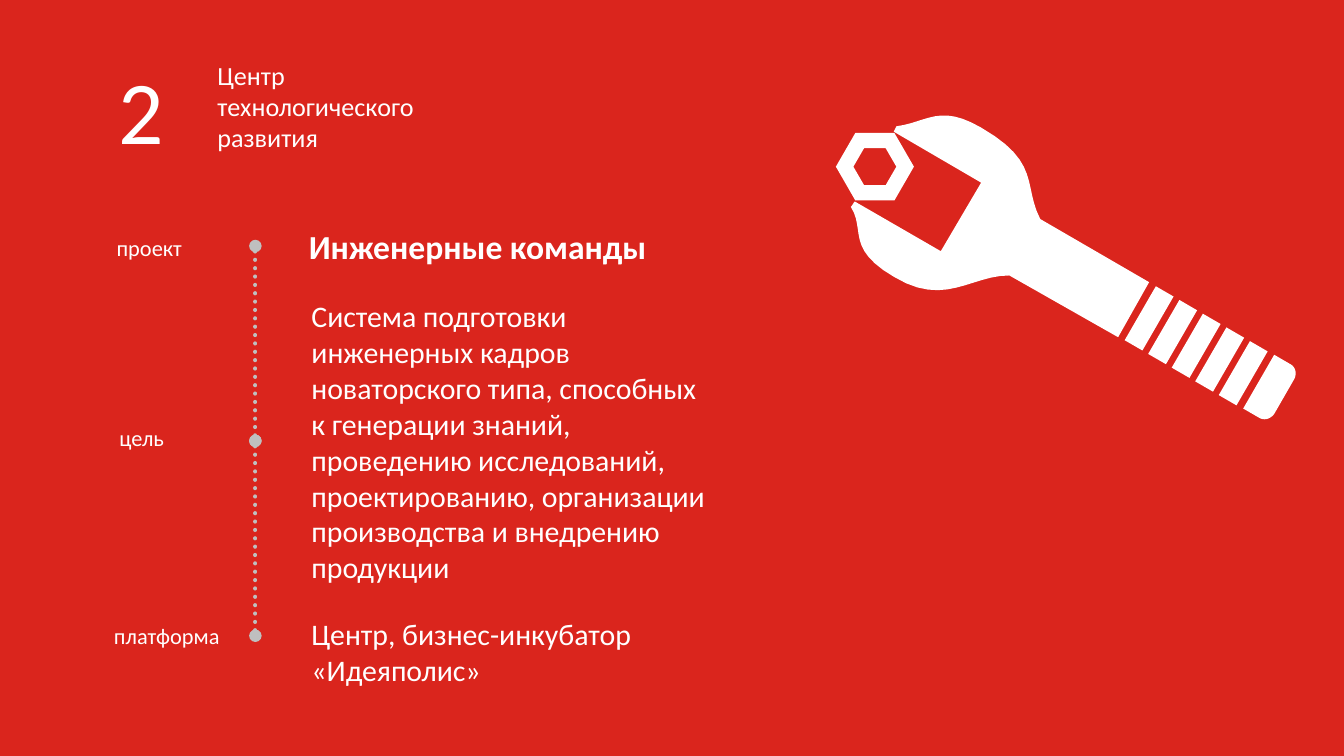
from dataclasses import dataclass
from math import cos, pi, sin

from lxml.etree import SubElement
from pptx import Presentation
from pptx.dml.color import RGBColor
from pptx.enum.dml import MSO_LINE_DASH_STYLE as Dash
from pptx.enum.shapes import MSO_CONNECTOR as Conn
from pptx.enum.text import MSO_AUTO_SIZE as AutoSize
from pptx.oxml.ns import qn
from pptx.util import Pt

RED, WHITE, GREY = "DA251D", "FFFFFF", "BFBFBF"
UNIT = 100  # freeform units per point
CURVE_STEPS = 12

Point = tuple[float, float]
Contour = list[Point]


@dataclass
class Label:
    text: str
    left: float
    top: float
    width: float
    height: float
    size: float
    bold: bool = False


LABELS = [
    Label("2", 56.2, 25.9, 35.3, 65.5, 48),
    Label("Центр технологического развития", 109.4, 28.1, 158.4, 58.3, 14),
    Label("проект", 55.4, 121.7, 95.8, 21.6, 12),
    Label("Инженерные команды", 158.4, 117.4, 328.3, 28.8, 18, True),
    Label("цель", 56.9, 223.9, 51.8, 21.6, 12),
    Label("Система подготовки инженерных кадров новаторского типа, способных "
          "к генерации знаний, проведению исследований, проектированию, "
          "организации производства и внедрению продукции",
          159.8, 156.2, 230.4, 162.7, 16),
    Label("платформа", 54, 329.8, 77, 21.6, 12),
    Label("Центр, бизнес-инкубатор «Идеяполис»", 159.8, 326.2, 228.2, 46.1, 16),
]

# Wrench outlines: a step of one point is a line, of three a Bezier curve
WRENCH_HEAD = [
    [(525.6, 68.4)],
    [(558, 87.1), (547.9, 99.4), (557.3, 117.4)],
    [(615.6, 151.2)], [(599, 180.7)], [(540.7, 147.6)],
    [(519.8, 147.6), (506.2, 164.9), (478.8, 148.3)],
    [(452.9, 133.2), (463.7, 123.1), (455.8, 110.9)],
    [(456.5, 110.2), (457.2, 108.7), (457.9, 108)],
    [(504, 134.6)], [(525.6, 97.9)], [(478.8, 70.6)], [(480.2, 67.7)],
    [(496.8, 65.5), (503.3, 55.4), (525.6, 68.4)],
]
HANDLE_END = [
    [(682.6, 190.1)], [(691.2, 195.1)],
    [(694.1, 196.6), (694.8, 200.2), (693.4, 203)],
    [(682.6, 221.8)],
    [(680.4, 224.6), (677.5, 225.4), (674.6, 223.9)],
    [(666, 218.9)],
]


def rgb(color: str) -> RGBColor:
    return RGBColor.from_string(color)


def outline(steps: list[list[Point]]) -> Contour:
    """Turn lines and Bezier curves into one list of points."""
    points = [steps[0][0]]
    for step in steps[1:]:
        if len(step) == 1:
            points += step
            continue
        curve = [points[-1], *step]
        for i in range(1, CURVE_STEPS + 1):
            t = i / CURVE_STEPS
            weights = ((1 - t) ** 3, 3 * t * (1 - t) ** 2, 3 * t * t * (1 - t), t ** 3)
            points.append((sum(w * x for w, (x, _) in zip(weights, curve)),
                           sum(w * y for w, (_, y) in zip(weights, curve))))
    return points


def hexagon(radius: float, turn: int) -> Contour:
    return [(468.7 + radius * cos(turn * i * pi / 3),
             89.3 + radius * sin(turn * i * pi / 3)) for i in range(6)]


def stripe(index: int) -> Contour:
    x, y = 619.2 + 12.6 * index, 153.4 + 7.35 * index
    return [(x, y), (x + 9.5, y + 5.5), (x - 7.2, y + 34.4), (x - 16.7, y + 28.9)]


def add_outline(s, contours: list[Contour], color: str) -> None:
    scaled = [[(x * UNIT, y * UNIT) for x, y in c] for c in contours]
    fb = s.shapes.build_freeform(*scaled[0][0], scale=Pt(1) / UNIT)
    for i, points in enumerate(scaled):
        if i:
            fb.move_to(*points[0])
        fb.add_line_segments(points[1:], close=True)
    sp = fb.convert_to_shape()
    sp.shadow.inherit = False
    sp.fill.solid()
    sp.fill.fore_color.rgb = rgb(color)
    sp.line.fill.background()


def add_label(s, label: Label) -> None:
    box = (Pt(v) for v in (label.left, label.top, label.width, label.height))
    tf = s.shapes.add_textbox(*box).text_frame
    tf.word_wrap = True
    tf.auto_size = AutoSize.SHAPE_TO_FIT_TEXT
    r = tf.paragraphs[0].add_run()
    r.text = label.text
    for name, value in {"name": "Calibri", "size": Pt(label.size), "bold": label.bold}.items():
        setattr(r.font, name, value)
    r.font.color.rgb = rgb(WHITE)


def add_dotted_line(s, x: float, top: float, bottom: float) -> None:
    cx = s.shapes.add_connector(Conn.STRAIGHT, Pt(x), Pt(top), Pt(x), Pt(bottom))
    for name, value in {"width": Pt(2.25), "dash_style": Dash.ROUND_DOT}.items():
        setattr(cx.line, name, value)
    cx.line.color.rgb = rgb(GREY)
    sp_pr = cx._element.spPr
    ln = sp_pr.find(qn("a:ln"))
    ln.set("cap", "rnd")
    for end in ("a:headEnd", "a:tailEnd"):
        SubElement(ln, qn(end), type="oval")
    SubElement(sp_pr, qn("a:effectLst"))


def main() -> None:
    prs = Presentation()
    prs.slide_width, prs.slide_height = Pt(720), Pt(405)
    s = prs.slides.add_slide(prs.slide_layouts[6])
    s.background.fill.solid()
    s.background.fill.fore_color.rgb = rgb(RED)

    # Nut and wrench
    add_outline(s, [hexagon(20.9, 1), hexagon(11.5, -1)], WHITE)
    stripes = [stripe(i) for i in range(5)]
    add_outline(s, [outline(WRENCH_HEAD), *stripes, outline(HANDLE_END)], WHITE)

    # Timeline
    for i in range(2):
        top = 131.8 + 104.4 * i
        add_dotted_line(s, 136.8, top, top + 104.4)

    # Texts
    for label in LABELS:
        add_label(s, label)

    prs.save("out.pptx")


if __name__ == "__main__":
    main()
